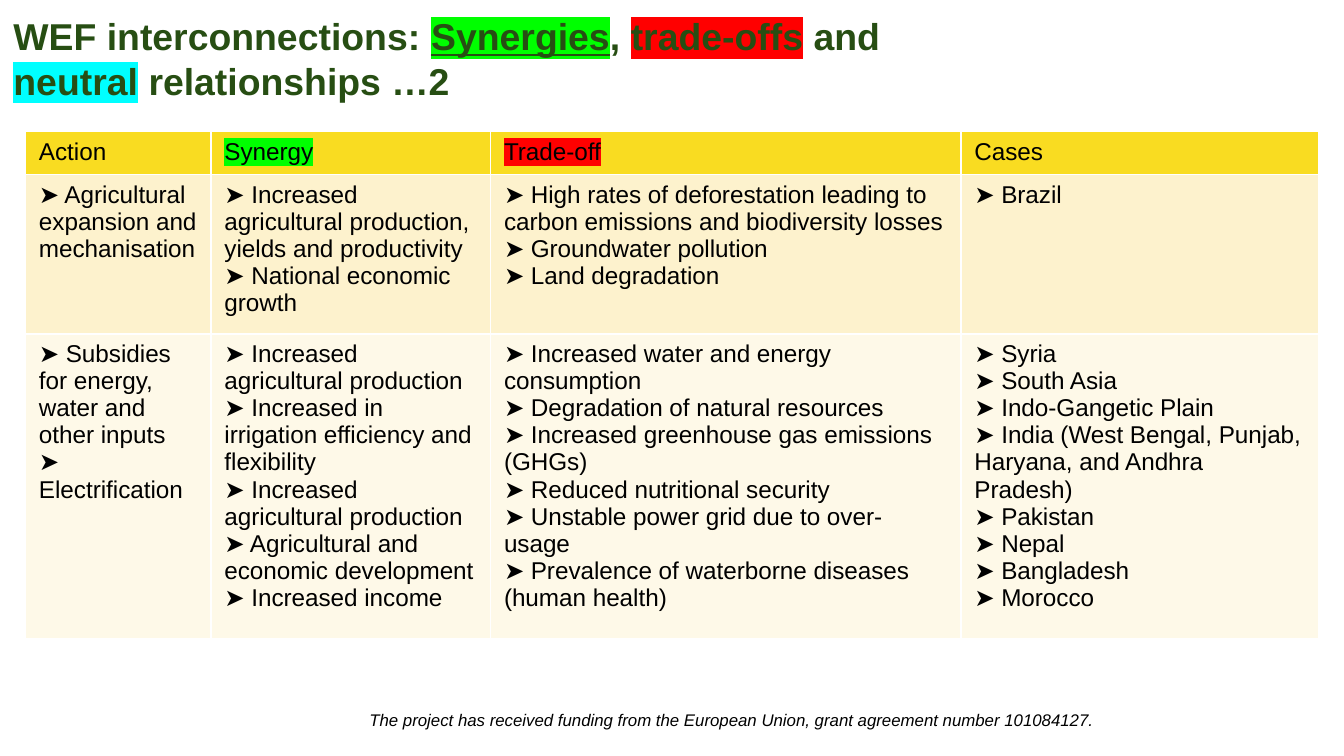
from lxml import etree
from pptx import Presentation
from pptx.dml import color
from pptx.enum import text
from pptx.oxml import ns
from pptx.util import Inches, Pt

GREEN, RED, CYAN = "00FF00", "FF0000", "00FFFF"
TITLE_PARTS = [
    ("WEF interconnections: ", None),
    ("Synergies", GREEN),
    (", ", None),
    ("trade-offs", RED),
    (" and ", None),
    ("neutral", CYAN),
    (" relationships …2", None),
]
HEADERS = [("Action", None), ("Synergy", GREEN), ("Trade-off", RED), ("Cases", None)]
ROWS = [
    [
        ["Agricultural expansion and mechanisation"],
        ["Increased agricultural production, yields and productivity",
         "National economic growth"],
        ["High rates of deforestation leading to carbon emissions and biodiversity losses",
         "Groundwater pollution",
         "Land degradation"],
        ["Brazil"],
    ],
    [
        ["Subsidies for energy, water and other inputs", "Electrification"],
        ["Increased agricultural production",
         "Increased in irrigation efficiency and flexibility",
         "Increased agricultural production",
         "Agricultural and economic development",
         "Increased income"],
        ["Increased water and energy consumption",
         "Degradation of natural resources",
         "Increased greenhouse gas emissions (GHGs)",
         "Reduced nutritional security",
         "Unstable power grid due to over-usage",
         "Prevalence of waterborne diseases (human health)"],
        ["Syria", "South Asia", "Indo-Gangetic Plain",
         "India (West Bengal, Punjab, Haryana, and Andhra Pradesh)",
         "Pakistan", "Nepal", "Bangladesh", "Morocco"],
    ],
]
COLUMN_WIDTHS = [1.38, 2.08, 3.5, 2.66]
ROW_HEIGHTS = [0.32, 1.18, 2.27]
ROW_FILLS = ["F9DC21", "FDF2CD", "FEF9E8"]


def rgb(value):
    return color.RGBColor.from_string(value)


def format_run(run, size, font_color="000000", highlight=None):
    run.font.size = Pt(size)
    run.font.color.rgb = rgb(font_color)
    run.font.name = "Arial"
    if highlight:
        # The schema wants the highlight straight after the text fill
        mark = etree.Element(ns.qn("a:highlight"))
        etree.SubElement(mark, ns.qn("a:srgbClr"), val=highlight)
        run.font.fill._xPr.find(ns.qn("a:solidFill")).addnext(mark)


def prepare_frame(text_frame, auto_size):
    text_frame.word_wrap = True
    text_frame.auto_size = auto_size
    text_frame.vertical_anchor = text.MSO_ANCHOR.TOP
    text_frame.margin_left = text_frame.margin_right = Inches(0.1)
    text_frame.margin_top = text_frame.margin_bottom = Inches(0.1)


def set_white_borders(cell):
    properties = cell._tc.get_or_add_tcPr()
    for index, side in enumerate(["lnL", "lnR", "lnT", "lnB"]):
        line = etree.Element(ns.qn(f"a:{side}"), w=str(Pt(1)))
        fill = etree.SubElement(line, ns.qn("a:solidFill"))
        etree.SubElement(fill, ns.qn("a:srgbClr"), val="FFFFFF")
        properties.insert(index, line)


def add_title(slide, left, top, width, height):
    title = slide.shapes.title
    title.left, title.top = Inches(left), Inches(top)
    title.width, title.height = Inches(width), Inches(height)
    prepare_frame(title.text_frame, text.MSO_AUTO_SIZE.NONE)
    paragraph = title.text_frame.paragraphs[0]
    paragraph.alignment = text.PP_ALIGN.LEFT
    paragraph.line_spacing = 1.0
    for words, highlight in TITLE_PARTS:
        run = paragraph.add_run()
        run.text = words
        format_run(run, 20, "274E13", highlight)
        run.font.bold = True
        run.font.underline = highlight == GREEN


def fill_cell(cell, lines, fill, highlight=None):
    cell.fill.solid()
    cell.fill.fore_color.rgb = rgb(fill)
    set_white_borders(cell)
    cell.text_frame.text = "\n".join(lines)
    for paragraph in cell.text_frame.paragraphs:
        for run in paragraph.runs:
            format_run(run, 13, highlight=highlight)


def add_action_table(slide, left, top, width, height):
    frame = slide.shapes.add_table(
        len(ROW_HEIGHTS), len(COLUMN_WIDTHS),
        Inches(left), Inches(top), Inches(width), Inches(height))
    table = frame.table
    for column, column_width in zip(table.columns, COLUMN_WIDTHS):
        column.width = Inches(column_width)
    for row, row_height in zip(table.rows, ROW_HEIGHTS):
        row.height = Inches(row_height)
    table.first_row = table.horz_banding = False

    for column, (header, highlight) in enumerate(HEADERS):
        fill_cell(table.cell(0, column), [header], ROW_FILLS[0], highlight)
    for row, entries in enumerate(ROWS, start=1):
        for column, items in enumerate(entries):
            lines = [f"➤ {item}" for item in items]
            fill_cell(table.cell(row, column), lines, ROW_FILLS[row])


def add_funding_note(slide, left, top, width, height):
    note = slide.shapes.add_textbox(
        Inches(left), Inches(top), Inches(width), Inches(height))
    prepare_frame(note.text_frame, text.MSO_AUTO_SIZE.SHAPE_TO_FIT_TEXT)
    note.text_frame.text = ("The project has received funding from the European Union, "
                            "grant agreement number 101084127.")
    paragraph = note.text_frame.paragraphs[0]
    paragraph.line_spacing = 1.08
    paragraph.space_after = Pt(8)
    format_run(paragraph.runs[0], 9)
    paragraph.runs[0].font.italic = True


def main():
    presentation = Presentation()
    presentation.slide_width = Inches(10)
    presentation.slide_height = presentation.slide_width * 9 // 16
    slide = presentation.slides.add_slide(presentation.slide_layouts[5])
    add_funding_note(slide, 2.65, 5.19, 6.13, 0.35)
    add_title(slide, 0, 0, 6.89, 0.76)
    add_action_table(slide, 0.19, 0.98, sum(COLUMN_WIDTHS), sum(ROW_HEIGHTS))
    presentation.save("out.pptx")


if __name__ == "__main__":
    main()
